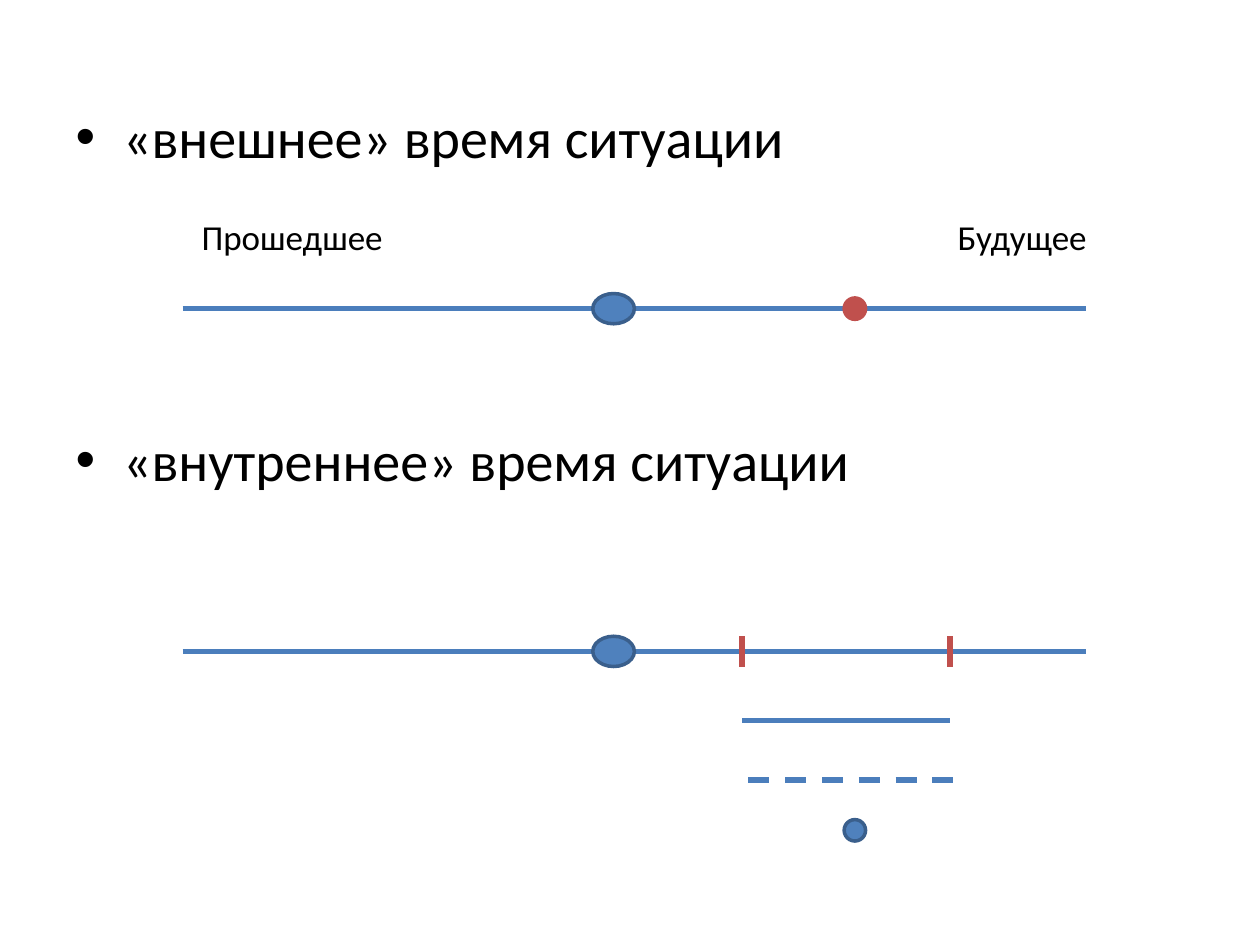
from lxml import etree
from pptx import Presentation
from pptx.dml.color import RGBColor
from pptx.enum.dml import MSO_LINE
from pptx.enum.shapes import MSO_CONNECTOR, MSO_SHAPE
from pptx.enum.text import MSO_AUTO_SIZE
from pptx.oxml.ns import qn
from pptx.util import Inches, Pt

BLUE, AXIS_BLUE, EDGE_BLUE, RED = "4F81BD", "4B7EBC", "3A5F8C", "C0504D"
AXIS_START, AXIS_END = 1.45, 8.62
NOW_X = 4.87
EVENT_X = 6.785
OUTER_Y, INNER_Y = 2.45, 5.17
SPAN_START, SPAN_END = 5.89, 7.54


def color(value):
    return RGBColor.from_string(value)


def add_line(slide, start, end, stroke=AXIS_BLUE, dash=None):
    line = slide.shapes.add_connector(
        MSO_CONNECTOR.STRAIGHT, *map(Inches, (*start, *end)))
    line.line.color.rgb = color(stroke)
    line.line.width = Pt(3)
    if dash:
        line.line.dash_style = dash
    etree.SubElement(line._element.spPr, qn("a:effectLst"))


def add_dot(slide, center_x, center_y, width, height, fill=BLUE, edge=EDGE_BLUE):
    dot = slide.shapes.add_shape(
        MSO_SHAPE.OVAL, Inches(center_x - width / 2),
        Inches(center_y - height / 2), Inches(width), Inches(height))
    dot.shadow.inherit = False
    dot.fill.solid()
    dot.fill.fore_color.rgb = color(fill)
    dot.line.color.rgb = color(edge)
    dot.line.width = Pt(2)


def add_axis(slide, y):
    """Time line with the present moment marked on it."""
    add_line(slide, (AXIS_START, y), (AXIS_END, y))
    add_dot(slide, NOW_X, y, 0.33, 0.24)


def write(paragraph, text, size):
    run = paragraph.add_run()
    run.text = text
    run.font.color.rgb = color("000000")
    for name, value in {"name": "Calibri", "size": Pt(size)}.items():
        setattr(run.font, name, value)


def add_label(slide, text, left):
    label = slide.shapes.add_textbox(
        Inches(left), Inches(1.71), Inches(1.8), Inches(0.34))
    frame = label.text_frame
    frame.word_wrap = True
    for side in ("left", "top", "right", "bottom"):
        setattr(frame, f"margin_{side}", 0)
    write(frame.paragraphs[0], text, 20)


def fill_body(body):
    box = {"left": 0.5, "top": 0.76, "width": 9, "height": 5.94}
    for name, value in box.items():
        setattr(body, name, Inches(value))
    frame = body.text_frame
    frame.auto_size = MSO_AUTO_SIZE.NONE
    outer = frame.paragraphs[0]
    write(outer, "«внешнее» время ситуации", 32)
    inner = frame.add_paragraph()
    inner.space_before = Pt(146.6)
    write(inner, "«внутреннее» время ситуации", 32)


def main():
    deck = Presentation()
    deck.slide_width, deck.slide_height = Inches(10), Inches(7.5)
    slide = deck.slides.add_slide(deck.slide_layouts[1])
    title = slide.shapes.title._element
    title.getparent().remove(title)
    fill_body(slide.placeholders[1])

    # External time: an event in the future
    add_label(slide, "Прошедшее", 1.6)
    add_label(slide, "Будущее", 7.6)
    add_axis(slide, OUTER_Y)
    add_dot(slide, EVENT_X, OUTER_Y, 0.17, 0.17, RED, RED)

    # Internal time: the bounds of the situation
    add_axis(slide, INNER_Y)
    for x in (SPAN_START, SPAN_END):
        add_line(slide, (x, INNER_Y - 0.12), (x, INNER_Y + 0.12), RED)

    # Continuous, repeated and momentary situations
    add_line(slide, (SPAN_START, 5.72), (SPAN_END, 5.72))
    add_line(slide, (5.94, 6.19), (7.6, 6.19), dash=MSO_LINE.DASH)
    add_dot(slide, EVENT_X, 6.59, 0.17, 0.17)

    deck.save("out.pptx")


if __name__ == "__main__":
    main()
